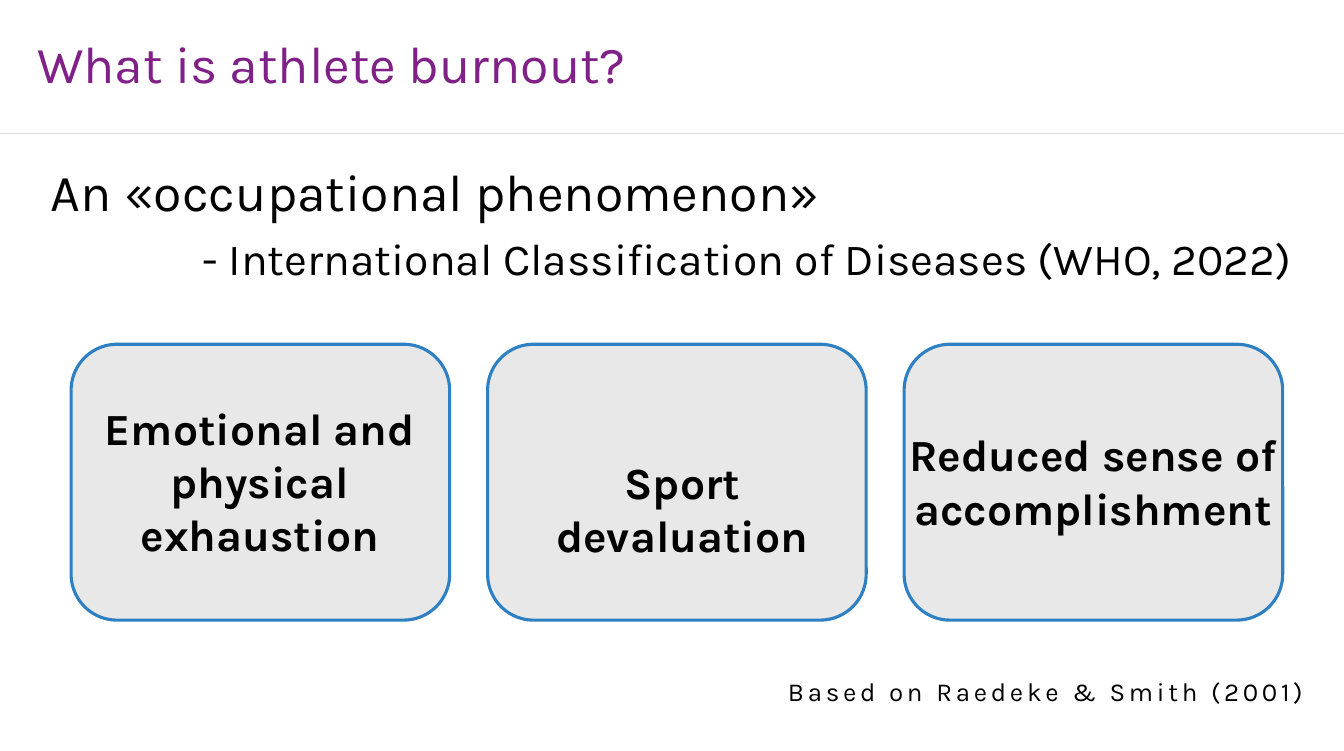
from lxml.etree import SubElement
from pptx import Presentation
from pptx.dml.color import RGBColor as Rgb
from pptx.enum.shapes import MSO_CONNECTOR as Conn, MSO_SHAPE as Shape
from pptx.enum.text import MSO_ANCHOR as Anchor, PP_ALIGN as Align
from pptx.oxml.ns import qn
from pptx.util import Cm, Pt

COLORS = {
    "title": "802187",
    "text": "000000",
    "card": "E8E8E8",
    "edge": "2F80C2",
    "rule": "D9D9D9",
}
FONT = "Karla"


def write(para, text, size, color="text", bold=False, align=Align.LEFT,
          before=0, lines=None, track=None):
    run = para.add_run()
    run.text = text
    font = run.font
    font.name, font.size, font.bold = FONT, Pt(size), bold
    font.color.rgb = Rgb.from_string(COLORS[color])
    para.alignment = align
    para.space_before = Pt(before)
    if lines:
        para.line_spacing = lines
    if track:
        font._element.set("spc", str(round(track * 100)))


class Page:
    def __init__(self, deck):
        self.shapes = deck.slides.add_slide(deck.slide_layouts[6]).shapes

    def rule(self, x1, x2, y):
        line = self.shapes.add_connector(Conn.STRAIGHT, Cm(x1), Cm(y), Cm(x2), Cm(y))
        line.line.color.rgb = Rgb.from_string(COLORS["rule"])
        line.line.width = Pt(1)
        SubElement(line._element.spPr, qn("a:effectLst"))

    def card(self, x, y, w, h):
        box = self.shapes.add_shape(Shape.ROUNDED_RECTANGLE, Cm(x), Cm(y), Cm(w), Cm(h))
        box.shadow.inherit = False
        box.fill.solid()
        box.fill.fore_color.rgb = Rgb.from_string(COLORS["card"])
        box.line.color.rgb = Rgb.from_string(COLORS["edge"])
        box.line.width = Pt(2.25)

    def text(self, x, y, w, h, *paras, anchor=Anchor.TOP, flush=False):
        frame = self.shapes.add_textbox(Cm(x), Cm(y), Cm(w), Cm(h)).text_frame
        frame.word_wrap = True
        frame.vertical_anchor = anchor
        if flush:
            frame.margin_left = frame.margin_right = 0
            frame.margin_top = frame.margin_bottom = 0
        for i, (words, style) in enumerate(paras):
            para = frame.add_paragraph() if i else frame.paragraphs[0]
            write(para, words, **style)


def main():
    deck = Presentation()
    deck.slide_width, deck.slide_height = Cm(34.01), Cm(19)
    page = Page(deck)

    # Heading
    page.rule(0, 34.01, 3.38)
    page.text(0.94, 0.66, 26.24, 1.85,
              ("What is athlete burnout?", dict(size=37.2, color="title")),
              anchor=Anchor.MIDDLE, flush=True)

    # Definition
    page.text(1.04, 3.91, 31.93, 4,
              ("An «occupational phenomenon»", dict(size=37.2)),
              ("- International Classification of Diseases (WHO, 2022)",
               dict(size=31.9, align=Align.RIGHT, before=7)))

    # Three dimensions: label and its box
    labels = [
        ("Emotional and physical exhaustion", (1.93, 10.01, 9.3, 4.34)),
        ("Sport devaluation", (12.62, 11.38, 9.3, 3)),
        ("Reduced sense of accomplishment", (22.61, 10.69, 10.11, 3)),
    ]
    for i, (label, area) in enumerate(labels):
        page.card(1.8 + i * 10.54, 8.71, 9.58, 6.98)
        page.text(*area, (label, dict(size=31.9, bold=True, align=Align.CENTER)))

    # Source line
    page.text(19.94, 17.17, 14, 0.79,
              ("Based on Raedeke & Smith (2001)",
               dict(size=18.6, lines=0.9, track=2.7)), flush=True)

    deck.save("out.pptx")


if __name__ == "__main__":
    main()
